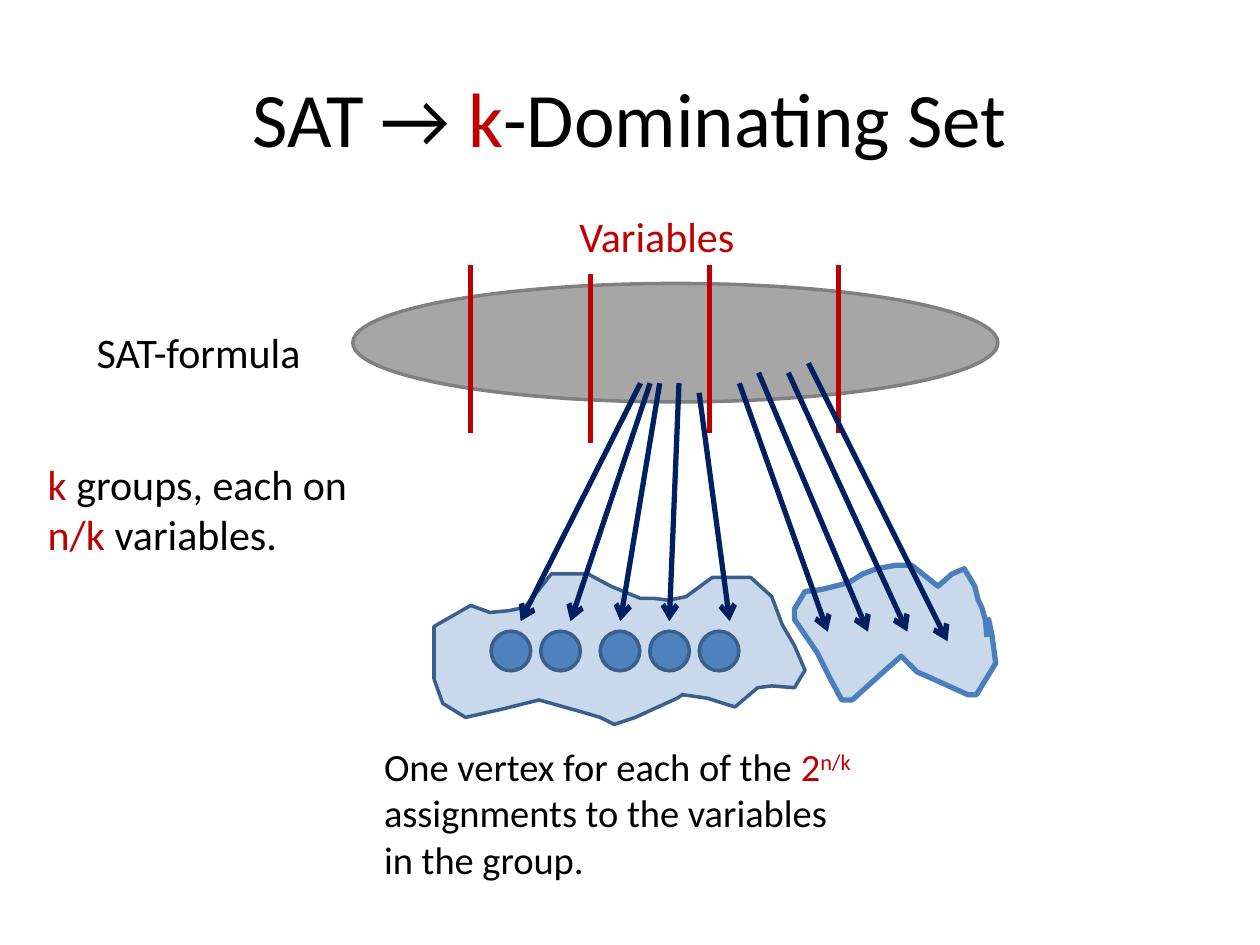
from dataclasses import dataclass
from typing import NamedTuple

from lxml import etree
from pptx import Presentation
from pptx.dml.color import RGBColor
from pptx.enum.shapes import MSO_CONNECTOR, MSO_SHAPE
from pptx.enum.text import MSO_ANCHOR, MSO_AUTO_SIZE, PP_ALIGN
from pptx.oxml.ns import qn
from pptx.util import Pt

STRAIGHT = MSO_CONNECTOR.STRAIGHT
OVAL = MSO_SHAPE.OVAL
MIDDLE = MSO_ANCHOR.MIDDLE
GROW = MSO_AUTO_SIZE.SHAPE_TO_FIT_TEXT
NO_RESIZE = MSO_AUTO_SIZE.NONE
LEFT, CENTER = PP_ALIGN.LEFT, PP_ALIGN.CENTER


@dataclass(frozen=True)
class Theme:
    font: str = "Calibri"
    text: str = "000000"
    accent: str = "C00000"
    arrow: str = "002060"
    formula_fill: str = "A6A6A6"
    formula_line: str = "808080"
    vertex_fill: str = "4F81BD"
    vertex_line: str = "3A5F8C"
    second_group_line: str = "4B7EBC"
    title_size: float = 44
    label_size: float = 24
    note_size: float = 22
    thin: float = 2
    thick: float = 3


THEME = Theme()


class Part(NamedTuple):
    text: str
    color: str = THEME.text
    raised: bool = False


class Box(NamedTuple):
    left: float
    top: float
    width: float
    height: float


class Label(NamedTuple):
    box: Box
    size: float
    paragraphs: list[list[Part]]
    is_title: bool = False


class Line(NamedTuple):
    start: tuple[float, float]
    end: tuple[float, float]


class Group(NamedTuple):
    outline: list[tuple[int, int]]
    closed: bool
    line_color: str
    line_width: float


BREAK = Part("\v")

LABELS = [
    Label(Box(36, 21.6, 648, 90), THEME.title_size,
          [[Part("SAT → "), Part("k", THEME.accent), Part("-Dominating Set")]], True),
    Label(Box(324, 116.6, 104.4, 36), THEME.label_size, [[Part("Variables", THEME.accent)]]),
    Label(Box(48.2, 182.9, 133.9, 36), THEME.label_size, [[Part("SAT-formula")]]),
    Label(Box(20.2, 258.5, 187.2, 65.5), THEME.label_size,
          [[Part("k", THEME.accent), Part(" groups, each on")],
           [Part("n/k", THEME.accent), Part(" variables.")]]),
    Label(Box(212.4, 421.2, 292.3, 87.1), THEME.note_size,
          [[Part("One vertex for each of the "), Part("2", THEME.accent),
            Part("n/k", THEME.accent, True), BREAK, Part("assignments to the variables")],
           [Part("in the group.")]]),
]

GROUPS = [
    Group([(420, 404), (433, 393), (441, 392), (454, 393), (460, 383), (454, 369),
           (447, 357), (441, 341), (429, 330), (407, 330), (392, 341), (382, 343),
           (374, 342), (366, 342), (349, 335), (336, 328), (327, 328), (315, 328),
           (308, 337), (303, 343), (300, 347), (291, 349), (280, 350), (269, 346),
           (248, 358), (248, 388), (253, 402), (266, 410), (288, 405), (308, 400),
           (333, 407), (343, 410), (351, 414), (363, 410), (387, 399), (390, 397),
           (404, 399)], True, THEME.vertex_line, THEME.thin),
    Group([(564, 364), (563, 354), (561, 347), (559, 343), (557, 335), (551, 325),
           (544, 328), (536, 335), (521, 323), (512, 323), (501, 325), (493, 328),
           (485, 333), (477, 335), (469, 337), (460, 338), (454, 348), (454, 354),
           (467, 373), (474, 387), (481, 400), (487, 400), (507, 382), (515, 375),
           (524, 384), (531, 387), (553, 397), (558, 397), (569, 379), (567, 364),
           (565, 354), (564, 355)], False, THEME.second_group_line, THEME.thick),
]

FORMULA = Box(201.6, 162, 368.6, 67.7)
SEPARATORS = [Line((x, bottom), (x, bottom - 96.5))
              for x, bottom in [(269, 247.7), (337.5, 252.9), (405.5, 247.7), (479, 247.7)]]
ARROWS = [
    Line((366, 219), (297.5, 355)),
    Line((371.5, 219), (326, 355)),
    Line((377, 219), (354.5, 355)),
    Line((388, 219), (382.5, 355)),
    Line((399.5, 224.5), (417, 355)),
    Line((422.5, 219), (473, 361)),
    Line((433.5, 213), (496, 361)),
    Line((450.5, 213), (518.5, 361)),
    Line((462, 207.5), (541.5, 366.5)),
]
VERTICES = [Box(left, 360.7, 22.6, 22.6) for left in (280.6, 309, 343, 371.3, 399.6)]


def paint(shape, fill: str, line: str, width: float) -> None:
    shape.shadow.inherit = False
    shape.fill.solid()
    shape.fill.fore_color.rgb = RGBColor.from_string(fill)
    shape.line.color.rgb = RGBColor.from_string(line)
    shape.line.width = Pt(width)


def draw_group(slide, group: Group) -> None:
    start, *rest = group.outline
    builder = slide.shapes.build_freeform(*start, scale=Pt(1))
    builder.add_line_segments(rest, close=group.closed)
    shape = builder.convert_to_shape()
    paint(shape, THEME.vertex_fill, group.line_color, group.line_width)
    color = shape._element.spPr.find(qn("a:solidFill"))[0]
    etree.SubElement(color, qn("a:alpha"), val="30000")


def draw_oval(slide, box: Box, fill: str, line: str) -> None:
    shape = slide.shapes.add_shape(OVAL, *map(Pt, box))
    paint(shape, fill, line, THEME.thin)


def draw_line(slide, line: Line, color: str, arrow: bool = False) -> None:
    connector = slide.shapes.add_connector(STRAIGHT, *map(Pt, line.start + line.end))
    connector.line.color.rgb = RGBColor.from_string(color)
    connector.line.width = Pt(THEME.thick)
    if arrow:
        etree.SubElement(connector.line._get_or_add_ln(), qn("a:tailEnd"), type="arrow")
    etree.SubElement(connector._element.spPr, qn("a:effectLst"))


def draw_label(slide, label: Label) -> None:
    frame = slide.shapes.add_textbox(*map(Pt, label.box)).text_frame
    frame.word_wrap = label.is_title
    frame.auto_size = NO_RESIZE if label.is_title else GROW
    if label.is_title:
        frame.vertical_anchor = MIDDLE
    for index, parts in enumerate(label.paragraphs):
        paragraph = frame.add_paragraph() if index else frame.paragraphs[0]
        paragraph.alignment = CENTER if label.is_title else LEFT
        paragraph.font.name = THEME.font
        paragraph.font.size = Pt(label.size)
        for part in parts:
            if part == BREAK:
                paragraph.add_line_break()
                continue
            run = paragraph.add_run()
            run.text = part.text
            run.font.color.rgb = RGBColor.from_string(part.color)
            if part.raised:
                run._r.get_or_add_rPr().set("baseline", "30000")


def main() -> None:
    presentation = Presentation()
    presentation.slide_width, presentation.slide_height = Pt(720), Pt(540)
    slide = presentation.slides.add_slide(presentation.slide_layouts[6])

    # Vertex groups and the formula behind everything else
    for group in GROUPS:
        draw_group(slide, group)
    draw_oval(slide, FORMULA, THEME.formula_fill, THEME.formula_line)

    # Text
    for label in LABELS:
        draw_label(slide, label)

    # Variable groups, and arrows to their assignments
    for separator in SEPARATORS:
        draw_line(slide, separator, THEME.accent)
    for arrow in ARROWS:
        draw_line(slide, arrow, THEME.arrow, arrow=True)
    for vertex in VERTICES:
        draw_oval(slide, vertex, THEME.vertex_fill, THEME.vertex_line)

    presentation.save("out.pptx")


if __name__ == "__main__":
    main()
